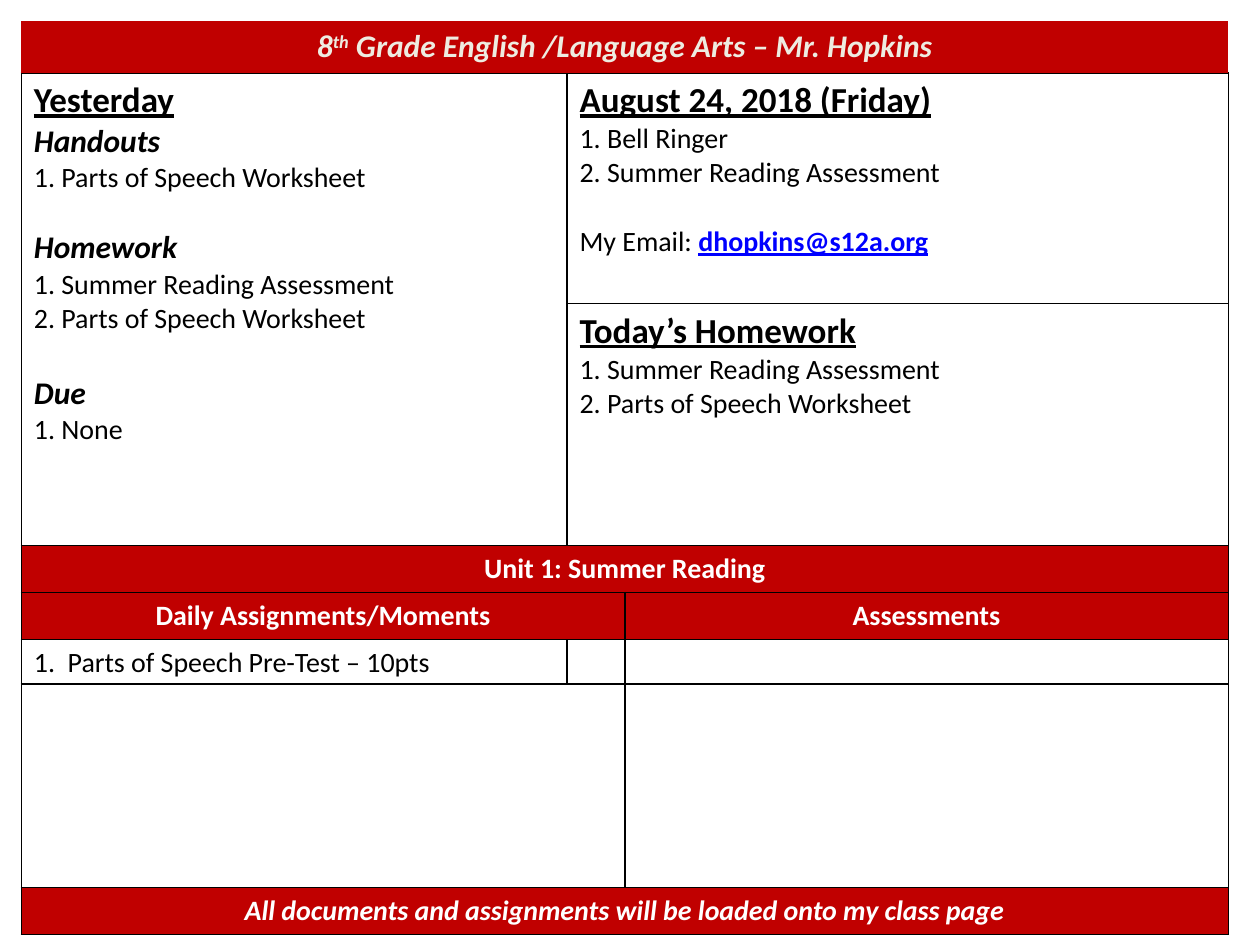
from dataclasses import dataclass

from lxml import etree
from pptx import Presentation
from pptx.dml.color import RGBColor
from pptx.enum.text import PP_ALIGN
from pptx.oxml.ns import qn
from pptx.util import Cm, Pt

LEFT, CENTER = PP_ALIGN.LEFT, PP_ALIGN.CENTER
FONT = "Calibri"
COLORS = {
    "red": "C00000",
    "cream": "EEECE1",
    "white": "FFFFFF",
    "black": "000000",
    "link": "0000FF",
}
EDGE, WIDTH = 0.43, 24.33
BLANK = 6


@dataclass(frozen=True)
class Run:
    text: str
    size: int = 16
    color: str = "black"
    bold: bool = False
    italic: bool = False
    under: bool = False
    raised: bool = False


@dataclass(frozen=True)
class Para:
    runs: tuple[Run, ...]
    gap: float = 0
    align: PP_ALIGN = LEFT


@dataclass(frozen=True)
class Cell:
    row: int
    col: int
    paras: tuple[Para, ...]
    fill: str = ""
    rows: int = 1
    cols: int = 1


@dataclass(frozen=True)
class Grid:
    top: float
    widths: tuple[float, ...]
    heights: tuple[float, ...]
    cells: tuple[Cell, ...]
    lined: bool = True


def head(text: str) -> Para:
    return Para((Run(text, 20, bold=True, under=True),))


def label(text: str, gap: float = 0) -> Para:
    return Para((Run(text, 18, bold=True, italic=True),), gap)


def item(text: str) -> Para:
    return Para((Run(text),))


def band(row: int, col: int, text: str, cols: int = 1, italic: bool = False) -> Cell:
    """Describe a red cell with centred white text."""
    run = Run(text, color="white", bold=True, italic=italic)
    return Cell(row, col, (Para((run,), align=CENTER),), "red", cols=cols)


def add_run(para, run: Run) -> None:
    part = para.add_run()
    part.text = run.text
    font = part.font
    font.name, font.size = FONT, Pt(run.size)
    font.bold, font.italic, font.underline = run.bold, run.italic, run.under
    font.color.rgb = RGBColor.from_string(COLORS[run.color])
    if run.raised:
        part._r.get_or_add_rPr().set("baseline", "30000")


def set_lines(cell, lined: bool) -> None:
    props = cell._tc.get_or_add_tcPr()
    for side in ("lnL", "lnR", "lnT", "lnB"):
        line = etree.SubElement(props, qn(f"a:{side}"), w=str(Pt(1)))
        if lined:
            fill = etree.SubElement(line, qn("a:solidFill"))
            etree.SubElement(fill, qn("a:srgbClr"), val=COLORS["black"])
        else:
            etree.SubElement(line, qn("a:noFill"))


def fill_cell(table, spec: Cell) -> None:
    cell = table.cell(spec.row, spec.col)
    if spec.rows > 1 or spec.cols > 1:
        cell.merge(table.cell(spec.row + spec.rows - 1, spec.col + spec.cols - 1))
    if spec.fill:
        cell.fill.solid()
        cell.fill.fore_color.rgb = RGBColor.from_string(COLORS[spec.fill])
    frame = cell.text_frame
    for i, spot in enumerate(spec.paras):
        para = frame.add_paragraph() if i else frame.paragraphs[0]
        para.alignment = spot.align
        para.space_before = Pt(spot.gap)
        for run in spot.runs:
            add_run(para, run)


def add_grid(slide, grid: Grid) -> None:
    table = slide.shapes.add_table(
        len(grid.heights), len(grid.widths),
        Cm(EDGE), Cm(grid.top), Cm(WIDTH), Cm(sum(grid.heights)),
    ).table
    table.first_row = table.horz_banding = False
    for col, width in zip(table.columns, grid.widths):
        col.width = Cm(width)
    for row, height in zip(table.rows, grid.heights):
        row.height = Cm(height)
    for cell in table.iter_cells():
        set_lines(cell, grid.lined)
        cell.fill.background()
    for spec in grid.cells:
        fill_cell(table, spec)


PAST = (
    head("Yesterday"),
    label("Handouts"),
    item("1. Parts of Speech Worksheet"),
    label("Homework", 19.5),
    item("1. Summer Reading Assessment"),
    item("2. Parts of Speech Worksheet"),
    label("Due", 22),
    item("1. None"),
)
TODAY = (
    head("August 24, 2018 (Friday)"),
    item("1. Bell Ringer"),
    item("2. Summer Reading Assessment"),
    Para((
        Run("My Email: "),
        Run("dhopkins@s12a.org", color="link", bold=True, under=True),
    ), 19.5),
)
TASKS = (
    head("Today’s Homework"),
    item("1. Summer Reading Assessment"),
    item("2. Parts of Speech Worksheet"),
)
TITLE = Para(tuple(
    Run(text, 18, "cream", True, True, raised=raised)
    for text, raised in (
        ("8", False),
        ("th", True),
        (" Grade English /Language Arts – Mr. Hopkins", False),
    )
), align=CENTER)

GRIDS = (
    Grid(1.47, (11, 13.33), (4.65, 4.65), (
        Cell(0, 0, PAST, rows=2),
        Cell(0, 1, TODAY),
        Cell(1, 1, TASKS),
    )),
    Grid(0.43, (WIDTH,), (1.04,), (Cell(0, 0, (TITLE,), "red"),), lined=False),
    Grid(11, (WIDTH / 2, WIDTH / 2), (0.94, 0.94, 5, 0.94), (
        band(0, 0, "Unit 1: Summer Reading", cols=2),
        band(1, 0, "Daily Assignments/Moments"),
        band(1, 1, "Assessments"),
        Cell(2, 0, (item("1.  Parts of Speech Pre-Test – 10pts"),)),
        band(3, 0, "All documents and assignments will be loaded onto my class page",
             cols=2, italic=True),
    )),
)


def main() -> None:
    deck = Presentation()
    deck.slide_width, deck.slide_height = Cm(25.4), Cm(19.05)
    slide = deck.slides.add_slide(deck.slide_layouts[BLANK])
    for grid in GRIDS:
        add_grid(slide, grid)
    deck.save("out.pptx")


if __name__ == "__main__":
    main()
